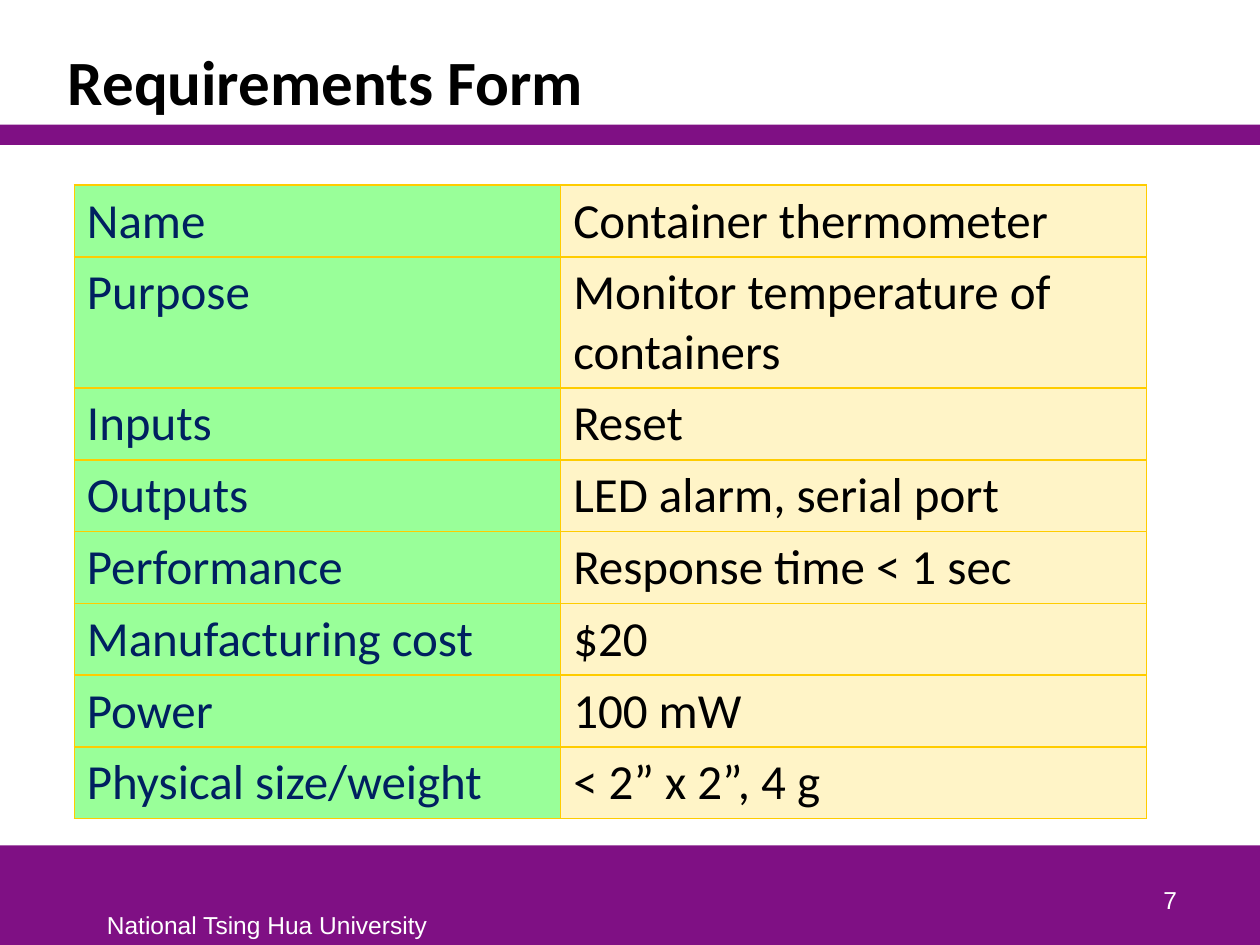
from pptx import Presentation
from pptx.dml.color import RGBColor
from pptx.enum.shapes import MSO_SHAPE
from pptx.enum.text import MSO_ANCHOR, PP_ALIGN
from pptx.oxml import parse_xml
from pptx.oxml.ns import nsdecls
from pptx.util import Inches, Pt

# Content
TITLE = "Requirements Form"
FOOTER = "National Tsing Hua University"
PAGE_NUMBER = "7"
REQUIREMENTS = [
    ("Name", "Container thermometer"),
    ("Purpose", "Monitor temperature of containers"),
    ("Inputs", "Reset"),
    ("Outputs", "LED alarm, serial port"),
    ("Performance", "Response time < 1 sec"),
    ("Manufacturing cost", "$20"),
    ("Power", "100 mW"),
    ("Physical size/weight", "< 2” x 2”, 4 g"),
]

# Style
PURPLE, WHITE, BLACK = "7F1084", "FFFFFF", "000000"
BORDER = "FFCC00"
COLUMNS = [  # width, fill, text colour
    (3.86, "99FF99", "002060"),
    (4.65, "FFF4C7", BLACK),
]
ROW_HEIGHT, TALL_ROW_HEIGHT = 0.57, 1.04
TALL_ROW = "Purpose"
BANDS = [(6.71, 0.79), (0.99, 0.16)]  # top, height


def color(value):
    return RGBColor.from_string(value)


def write(frame, text, size, font, text_color, bold=False):
    frame.text = text
    para = frame.paragraphs[0]
    span = para.runs[0]
    span.font.size = Pt(size)
    span.font.name = font
    span.font.bold = bold
    span.font.color.rgb = color(text_color)
    return para


def add_text(page, place, text, size, font, text_color, bold=False,
             anchor=MSO_ANCHOR.BOTTOM, wrap=True):
    box = page.shapes.add_textbox(*map(Inches, place))
    frame = box.text_frame
    frame.word_wrap = wrap
    frame.vertical_anchor = anchor
    return write(frame, text, size, font, text_color, bold)


def add_band(page, top, height):
    band = page.shapes.add_shape(MSO_SHAPE.RECTANGLE, 0, Inches(top),
                                 Inches(10), Inches(height))
    band.shadow.inherit = False
    band.fill.solid()
    band.fill.fore_color.rgb = color(PURPLE)
    band.line.fill.background()


def set_borders(cell):
    properties = cell._tc.get_or_add_tcPr()
    for position, side in enumerate(("lnL", "lnR", "lnT", "lnB")):
        properties.insert(position, parse_xml(
            f'<a:{side} {nsdecls("a")} w="{Pt(1)}"><a:solidFill>'
            f'<a:srgbClr val="{BORDER}"/></a:solidFill></a:{side}>'))


def add_requirements(page):
    heights = [TALL_ROW_HEIGHT if name == TALL_ROW else ROW_HEIGHT
               for name, _ in REQUIREMENTS]
    width = sum(column[0] for column in COLUMNS)
    table = page.shapes.add_table(
        len(REQUIREMENTS), len(COLUMNS), Inches(0.59), Inches(1.47),
        Inches(width), Inches(sum(heights))).table
    table.first_row = table.horz_banding = False
    for index, column in enumerate(COLUMNS):
        table.columns[index].width = Inches(column[0])
    for row, (height, texts) in enumerate(zip(heights, REQUIREMENTS)):
        table.rows[row].height = Inches(height)
        for index, (text, style) in enumerate(zip(texts, COLUMNS)):
            _, fill, text_color = style
            cell = table.cell(row, index)
            cell.fill.solid()
            cell.fill.fore_color.rgb = color(fill)
            write(cell.text_frame, text, 28, "Calibri", text_color)
            set_borders(cell)


def main():
    deck = Presentation()
    deck.slide_width, deck.slide_height = Inches(10), Inches(7.5)
    page = deck.slides.add_slide(deck.slide_layouts[6])

    # Bands and footer
    for top, height in BANDS:
        add_band(page, top, height)
    add_text(page, (0.75, 7.17, 2.76, 0.33), FOOTER, 14, "Arial", WHITE,
             anchor=MSO_ANCHOR.TOP, wrap=False)
    number = add_text(page, (7.36, 6.81, 2.08, 0.5), PAGE_NUMBER, 14,
                      "Arial", WHITE)
    number.alignment = PP_ALIGN.RIGHT

    # Title and table
    title = add_text(page, (0.44, 0.25, 8.97, 0.74), TITLE, 36, "Calibri",
                     BLACK, bold=True)
    title.line_spacing = 0.85
    add_requirements(page)

    deck.save("out.pptx")


if __name__ == "__main__":
    main()
